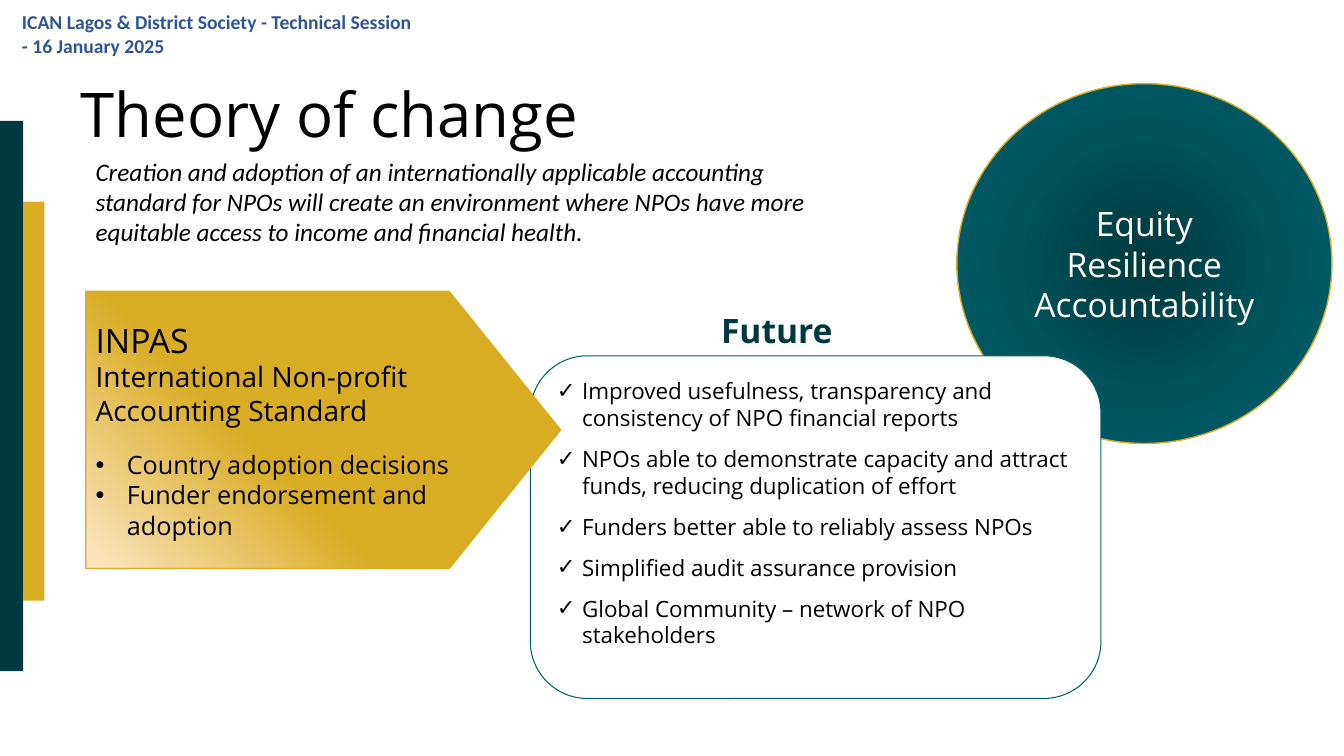
from lxml import etree
from pptx import Presentation
from pptx.dml.color import RGBColor
from pptx.enum.shapes import MSO_SHAPE as Shape
from pptx.enum.text import MSO_ANCHOR as Anchor, PP_ALIGN as Align
from pptx.oxml import parse_xml
from pptx.oxml.ns import qn
from pptx.util import Inches, Pt

BLACK = RGBColor(0x00, 0x00, 0x00)
WHITE = RGBColor(0xFF, 0xFF, 0xFF)
DARK = RGBColor(0x00, 0x3A, 0x40)
TEAL = RGBColor(0x00, 0x61, 0x6C)
GOLD = RGBColor(0xD8, 0xAD, 0x24)
BLUE = RGBColor(0x2F, 0x55, 0x97)
DEEP = RGBColor(0x00, 0x39, 0x40)
MID = RGBColor(0x00, 0x52, 0x5B)
CREAM = RGBColor(0xFB, 0xE2, 0xBA)

# Content
HEADER = "ICAN Lagos & District Society - Technical Session - 16 January 2025"
TITLE = "Theory of change"
INTRO = ("Creation and adoption of an internationally applicable accounting "
         "standard for NPOs will create an environment where NPOs have more "
         "equitable access to income and financial health.")
VALUES = ["Equity", "Resilience", "Accountability"]
FUTURE = "Future"
GAINS = [
    "Improved usefulness, transparency and consistency of NPO financial reports",
    "NPOs able to demonstrate capacity and attract funds, reducing duplication of effort",
    "Funders better able to reliably assess NPOs",
    "Simplified audit assurance provision",
    "Global Community – network of NPO stakeholders",
]
# text, size, bullet, space before
INPAS = [
    ("INPAS", 24, None, 0),
    ("International Non-profit Accounting Standard", 20, None, 0),
    ("Country adoption decisions", 18, "•", 16),
    ("Funder endorsement and adoption", 18, "•", 0),
]
# left, top, width, height, colour
BARS = [(0, 1.2, 0.23, 5.46, DARK), (0.23, 2, 0.21, 3.96, GOLD)]

# Gradients
RADIAL = ('<a:path path="circle"><a:fillToRect l="50000" t="50000" '
          'r="50000" b="50000"/></a:path>')
SLANT = '<a:lin ang="8100000" scaled="0"/>'

deck = Presentation()
deck.slide_width, deck.slide_height = Inches(13.33), Inches(7.5)
slide = deck.slides.add_slide(deck.slide_layouts[5])


def place(item, *box):
    names = ("left", "top", "width", "height")
    for name, size in zip(names, box):
        setattr(item, name, Inches(size))


def write(para, text, color=BLACK, **look):
    run = para.add_run()
    run.text = text
    run.font.color.rgb = color
    for name, value in {"name": "Open Sans", **look}.items():
        setattr(run.font, name, value)


def bullet(para, mark, indent):
    props = para._p.get_or_add_pPr()
    props.set("marL", str(Inches(indent)))
    props.set("indent", str(-Inches(indent)))
    etree.SubElement(props, qn("a:buFont")).set("typeface", "Arial")
    etree.SubElement(props, qn("a:buChar")).set("char", mark)


def add_paras(frame, count):
    return [frame.paragraphs[0]] + [frame.add_paragraph() for _ in range(count - 1)]


def add_label(box, text, **look):
    label = slide.shapes.add_textbox(*map(Inches, box))
    label.text_frame.word_wrap = True
    write(label.text_frame.paragraphs[0], text, **look)
    return label.text_frame


def add_form(kind, box, fill, edge=None, width=1):
    form = slide.shapes.add_shape(kind, *map(Inches, box))
    form.shadow.inherit = False
    form.fill.solid()
    form.fill.fore_color.rgb = fill
    if edge is None:
        form.line.fill.background()
    else:
        form.line.color.rgb = edge
        form.line.width = Pt(width)
    form.text_frame.word_wrap = True
    return form


def shade(form, stops, course):
    marks = "".join(f'<a:gs pos="{at * 1000}"><a:srgbClr val="{color}"/></a:gs>'
                    for at, color in stops)
    grad = parse_xml(
        '<a:gradFill xmlns:a="http://schemas.openxmlformats.org/drawingml/2006/main" '
        f'rotWithShape="1"><a:gsLst>{marks}</a:gsLst>{course}</a:gradFill>')
    props = form._element.spPr
    props.replace(props.find(qn("a:solidFill")), grad)


# Side bars and header
for *box, color in BARS:
    add_form(Shape.RECTANGLE, box, color)
add_label((0.12, 0.05, 4.1, 0.4), HEADER, color=BLUE, name="Calibri",
          size=Pt(14), bold=True)

# Circle of values
circle = add_form(Shape.OVAL, (9.49, 0.83, 3.72, 3.57), MID, GOLD)
shade(circle, [(0, DEEP), (50, MID), (100, TEAL)], RADIAL)
circle.text_frame.vertical_anchor = Anchor.MIDDLE
for para, text in zip(add_paras(circle.text_frame, len(VALUES)), VALUES):
    para.alignment = Align.CENTER
    write(para, text, WHITE, size=Pt(24))

# Title and introduction
title = slide.shapes.title
place(title, 0.7, 0.1, 11.5, 1.45)
title.text_frame.vertical_anchor = Anchor.BOTTOM
head = title.text_frame.paragraphs[0]
head.alignment, head.line_spacing = Align.LEFT, 0.9
write(head, TITLE, size=Pt(44))
add_label((0.85, 1.5, 7.64, 1.01), INTRO, name="Calibri", size=Pt(18), italic=True)

# Future heading and list of gains
frame = add_label((6.53, 2.88, 2.35, 0.65), FUTURE, color=DARK, size=Pt(24), bold=True)
frame.vertical_anchor = Anchor.BOTTOM
frame.paragraphs[0].alignment = Align.CENTER
frame.paragraphs[0].line_spacing = 0.9

panel = add_form(Shape.ROUNDED_RECTANGLE, (5.26, 3.53, 5.66, 3.4), WHITE, TEAL, 0.75)
panel.text_frame.vertical_anchor = Anchor.TOP
for i, para in enumerate(add_paras(panel.text_frame, len(GAINS))):
    para.alignment = Align.LEFT
    para.space_before = Pt(10 if i else 0)
    bullet(para, "✓", 0.25)
    write(para, GAINS[i], size=Pt(16))

# Standard arrow
arrow = add_form(Shape.PENTAGON, (0.85, 2.89, 4.71, 2.75), GOLD, GOLD)
arrow.adjustments[0] = 0.402
shade(arrow, [(61, GOLD), (97, CREAM)], SLANT)
arrow.text_frame.vertical_anchor = Anchor.MIDDLE
paras = add_paras(arrow.text_frame, len(INPAS))
for para, (text, size, mark, gap) in zip(paras, INPAS):
    para.alignment = Align.LEFT
    para.space_before = Pt(gap)
    if mark:
        bullet(para, mark, 0.31)
    write(para, text, size=Pt(size))

deck.save("out.pptx")
